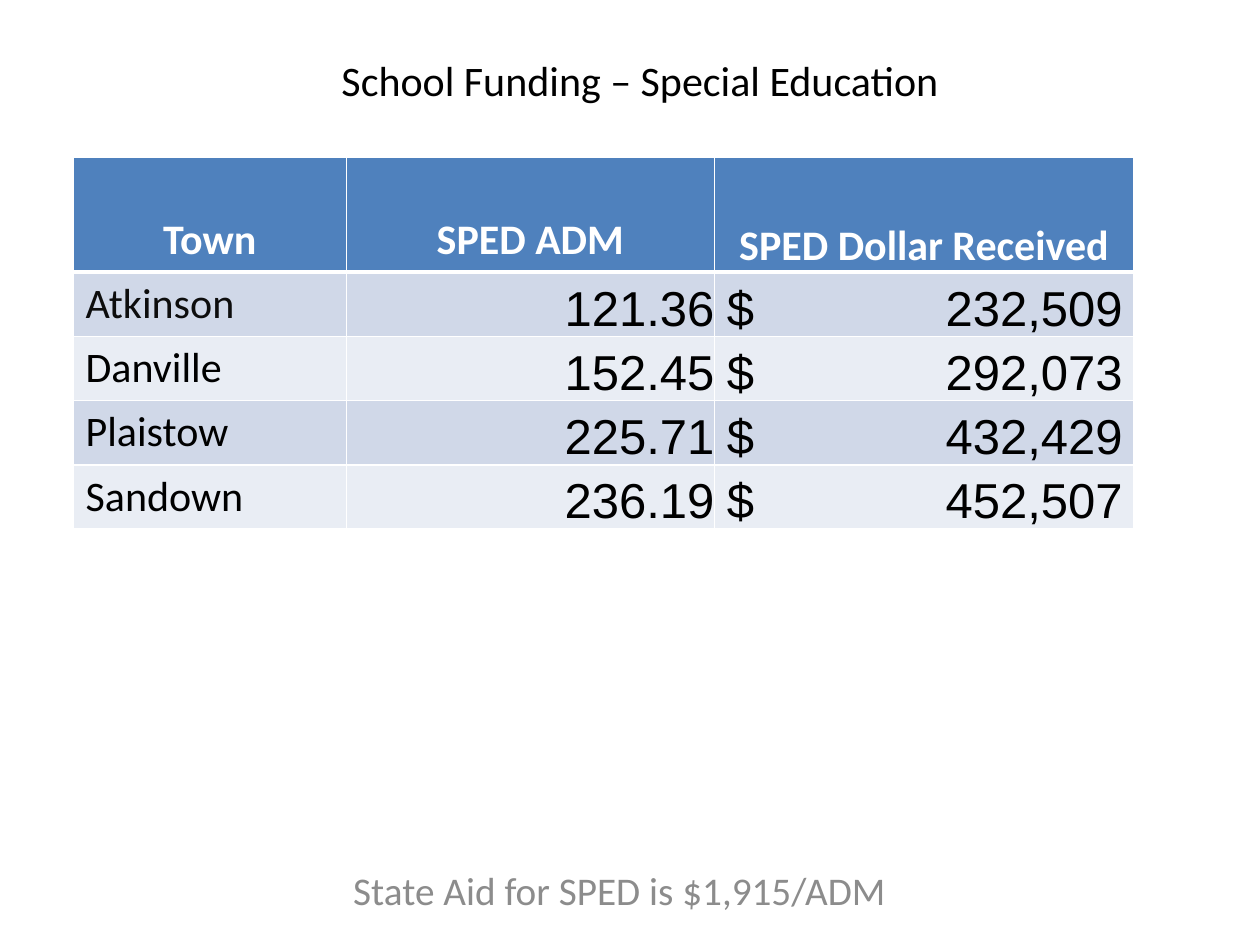
from dataclasses import dataclass

from lxml import etree
from pptx import Presentation
from pptx.dml.color import RGBColor
from pptx.enum.text import MSO_ANCHOR, PP_ALIGN
from pptx.oxml.ns import qn
from pptx.util import Inches, Pt

LEFT, CENTER, RIGHT = PP_ALIGN.LEFT, PP_ALIGN.CENTER, PP_ALIGN.RIGHT
TOP, MIDDLE, BOTTOM = MSO_ANCHOR.TOP, MSO_ANCHOR.MIDDLE, MSO_ANCHOR.BOTTOM


@dataclass(frozen=True)
class Theme:
    font: str = "Calibri"
    number_font: str = "Arial"
    black: str = "000000"
    white: str = "FFFFFF"
    town: str = "0D0D0D"
    grey: str = "8C8C8C"
    header: str = "4F81BD"
    bands: tuple = ("D0D8E8", "E9EDF4")
    body_size: float = 24
    number_size: float = 28
    note_size: float = 22.4


T = Theme()


def write(box, text, *, size=T.body_size, font=T.font, color=T.black, bold=False,
          align=LEFT, anchor=TOP, margins=(0.1, 0.05, 0.1, 0.05), tab=None):
    """Fill a text box or table cell; margins are left, top, right, bottom."""
    tf = box.text_frame
    tf.word_wrap = True
    holder = box if hasattr(box, "is_merge_origin") else tf
    holder.vertical_anchor = anchor
    holder.margin_left, holder.margin_top, holder.margin_right, holder.margin_bottom = (
        Inches(m) for m in margins)
    p = tf.paragraphs[0]
    p.alignment = align
    if tab:
        tabs = etree.SubElement(p._p.get_or_add_pPr(), qn("a:tabLst"))
        etree.SubElement(tabs, qn("a:tab"), pos=str(Inches(tab)), algn="r")
    r = p.add_run()
    r.text = text
    r.font.size, r.font.name, r.font.bold = Pt(size), font, bold
    r.font.color.rgb = RGBColor.from_string(color)


def paint(cell, fill, bottom=1):
    """Set a cell's fill and its white borders."""
    cell.fill.solid()
    cell.fill.fore_color.rgb = RGBColor.from_string(fill)
    tcPr = cell._tc.get_or_add_tcPr()
    widths = {"a:lnL": 1, "a:lnR": 1, "a:lnT": 1, "a:lnB": bottom}
    for i, (tag, width) in enumerate(widths.items()):
        ln = etree.Element(qn(tag), w=str(Pt(width)))
        solid = etree.SubElement(ln, qn("a:solidFill"))
        etree.SubElement(solid, qn("a:srgbClr"), val=T.white)
        tcPr.insert(i, ln)


prs = Presentation()
prs.slide_width, prs.slide_height = Inches(10), Inches(7.5)
s = prs.slides.add_slide(prs.slide_layouts[6])

# Title
title = s.shapes.add_textbox(Inches(0.83), Inches(0.25), Inches(8.5), Inches(0.77))
write(title, "School Funding – Special Education", align=CENTER, anchor=MIDDLE)

# Funding table
headers = ["Town", "SPED ADM", "SPED Dollar Received"]
rows = [
    ("Atkinson", "121.36", "232,509"),
    ("Danville", "152.45", "292,073"),
    ("Plaistow", "225.71", "432,429"),
    ("Sandown", "236.19", "452,507"),
]
col_widths = [2.17, 2.92, 3.33]
header_height, row_height = 0.91, 0.51
table = s.shapes.add_table(
    len(rows) + 1, len(headers), Inches(0.58), Inches(1.25), Inches(sum(col_widths)),
    Inches(header_height + row_height * len(rows))).table
table.first_row = table.horz_banding = False
for col, width in zip(table.columns, col_widths):
    col.width = Inches(width)
for i, row in enumerate(table.rows):
    row.height = Inches(row_height if i else header_height)

# Header row: the last heading sits on the bottom edge
for c, text in enumerate(headers):
    cell = table.cell(0, c)
    last = c == len(headers) - 1
    write(cell, text, color=T.white, bold=True, align=CENTER,
          anchor=BOTTOM if last else TOP,
          margins=(0.01, 0.01, 0.01, 0) if last else (0.1, 0.45, 0.1, 0.05))
    paint(cell, T.header, bottom=3)

# Town rows: amounts align on a right tab
number = dict(size=T.number_size, font=T.number_font, anchor=BOTTOM)
for i, (town, adm, dollars) in enumerate(rows):
    cells = [table.cell(i + 1, c) for c in range(len(headers))]
    write(cells[0], town, color=T.black if i else T.town)
    write(cells[1], adm, align=RIGHT, margins=(0, 0, 0, 0), **number)
    write(cells[2], f"$\t{dollars}", margins=(0.1, 0, 0, 0), tab=3.14, **number)
    for cell in cells:
        paint(cell, T.bands[i % 2])

# Footnote
note = s.shapes.add_textbox(Inches(1.42), Inches(6.83), Inches(7), Inches(0.42))
write(note, "State Aid for SPED is $1,915/ADM", size=T.note_size, color=T.grey, align=CENTER)

prs.save("out.pptx")
